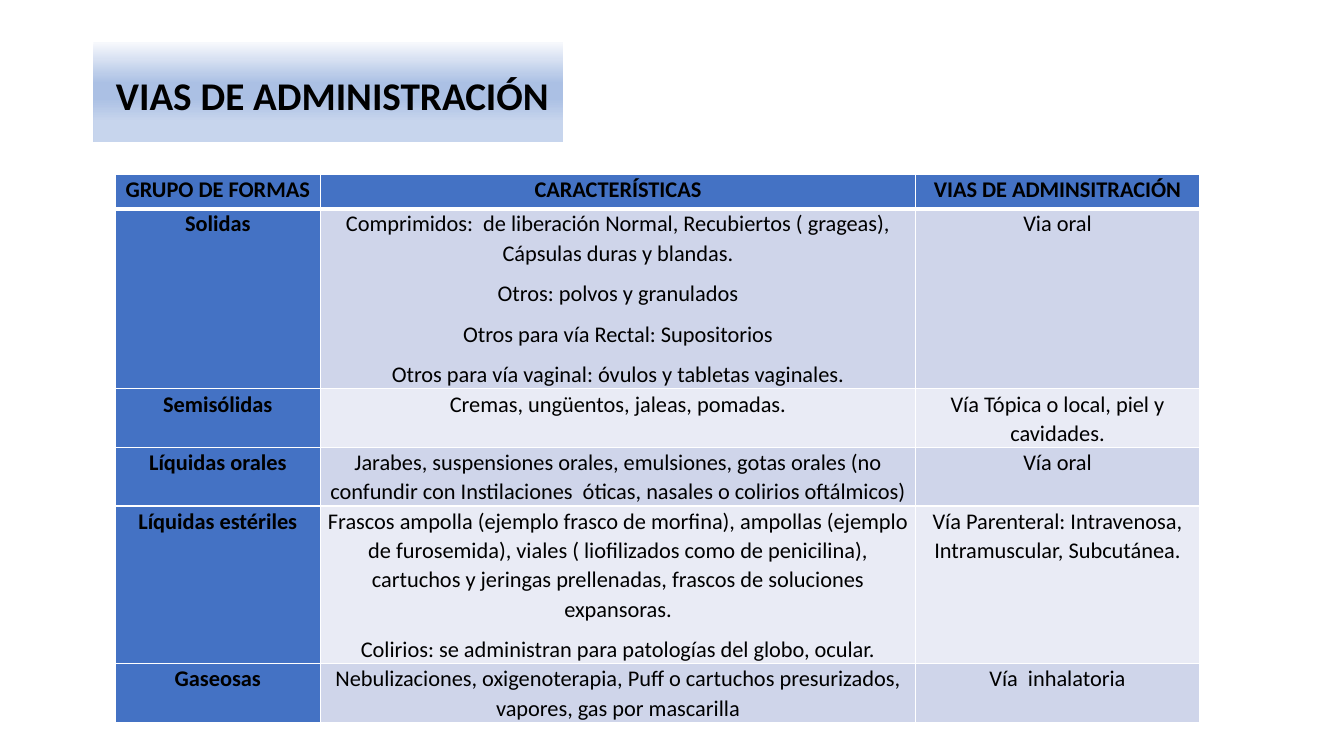
from lxml.etree import SubElement
from pptx import Presentation
from pptx.dml.color import RGBColor
from pptx.enum.text import MSO_ANCHOR, MSO_AUTO_SIZE, PP_ALIGN
from pptx.oxml import parse_xml
from pptx.oxml.ns import nsdecls, qn
from pptx.util import Cm, Pt

BLUE, WHITE, BLACK = "4472C4", "FFFFFF", "000000"
BANDS = ["CFD5EA", "E9EBF5"]
STOPS = [(0, "F6F8FC"), (41, "ABC0E4"), (56, "ABC0E4"), (80, "C7D5ED")]
WIDTHS = [5.16, 15.01, 7.14]
HEIGHTS = [0.86, 3.84, 0.89, 1.32, 3.48, 1.32]
ROWS = [
    ("GRUPO DE FORMAS", "CARACTERÍSTICAS", "VIAS DE ADMINSITRACIÓN"),
    ("Solidas",
     "Comprimidos:  de liberación Normal, Recubiertos ( grageas), Cápsulas duras y blandas.\n"
     "Otros: polvos y granulados\n"
     "Otros para vía Rectal: Supositorios\n"
     "Otros para vía vaginal: óvulos y tabletas vaginales.",
     "Via oral"),
    ("Semisólidas", "Cremas, ungüentos, jaleas, pomadas.",
     "Vía Tópica o local, piel y cavidades."),
    ("Líquidas orales",
     "Jarabes, suspensiones orales, emulsiones, gotas orales (no confundir con "
     "Instilaciones  óticas, nasales o colirios oftálmicos)",
     "Vía oral"),
    ("Líquidas estériles",
     "Frascos ampolla (ejemplo frasco de morfina), ampollas (ejemplo de furosemida), "
     "viales ( liofilizados como de penicilina), cartuchos y jeringas prellenadas, "
     "frascos de soluciones expansoras.\n"
     "Colirios: se administran para patologías del globo, ocular.",
     "Vía Parenteral: Intravenosa, Intramuscular, Subcutánea."),
    ("Gaseosas",
     "Nebulizaciones, oxigenoterapia, Puff o cartuchos presurizados, vapores, "
     "gas por mascarilla",
     "Vía  inhalatoria"),
]


def color(code):
    """Turn a hex string into a colour."""
    return RGBColor.from_string(code)


def apply(item, values):
    """Set each attribute named in a dict of values."""
    for name, value in values.items():
        setattr(item, name, value)


def style(font, size, bold):
    """Format a font in the slide's typeface."""
    apply(font, {"name": "Calibri", "size": Pt(size), "bold": bold})
    font.color.rgb = color(BLACK)


def shade(shape):
    """Fill a shape with the vertical blue gradient."""
    shape.fill.gradient()
    shape.fill.gradient_angle = 270
    stops = shape.fill._fill._gradFill.find(qn("a:gsLst"))
    for old in list(stops):
        stops.remove(old)
    for place, code in STOPS:
        stop = SubElement(stops, qn("a:gs"), pos=str(place * 1000))
        SubElement(stop, qn("a:srgbClr"), val=code)


def edge(cell, side, width):
    """Draw one white border of a cell."""
    cell._tc.get_or_add_tcPr().append(parse_xml(
        f'<a:ln{side} {nsdecls("a")} w="{Pt(width)}"><a:solidFill>'
        f'<a:srgbClr val="{WHITE}"/></a:solidFill></a:ln{side}>'))


def banner(slide, left, top, width, height):
    """Place the title on its gradient band."""
    title = slide.shapes.title
    apply(title, {"left": left, "top": top, "width": width, "height": height})
    shade(title)
    frame = title.text_frame
    apply(frame, {"vertical_anchor": MSO_ANCHOR.MIDDLE, "word_wrap": True,
                  "auto_size": MSO_AUTO_SIZE.NONE})
    para = frame.paragraphs[0]
    apply(para, {"alignment": PP_ALIGN.LEFT, "line_spacing": 0.9})
    for text, size in [(" ", 40), ("VIAS DE ADMINISTRACIÓN", 28)]:
        run = para.add_run()
        run.text = text
        style(run.font, size, True)


def fill_cell(cell, text, row, col):
    """Write, border and colour one cell."""
    head = row == 0 or col == 0
    cell.text = text
    apply(cell, {"margin_left": Cm(0.18), "margin_right": Cm(0.18),
                 "margin_top": 0, "margin_bottom": 0})
    for para in cell.text_frame.paragraphs:
        apply(para, {"alignment": PP_ALIGN.CENTER, "line_spacing": 1.07,
                     "space_after": Pt(8)})
        style(para.runs[0].font, 16, head)
    widths = {"L": 1, "R": 1, "T": 3 if row == 1 else 1, "B": 3 if row == 0 else 1}
    for side, width in widths.items():
        edge(cell, side, width)
    cell.fill.solid()
    cell.fill.fore_color.rgb = color(BLUE if head else BANDS[(row - 1) % 2])


def grid(slide, left, top):
    """Place the table of forms and routes."""
    table = slide.shapes.add_table(len(ROWS), len(WIDTHS), left, top,
                                   Cm(sum(WIDTHS)), Cm(sum(HEIGHTS))).table
    for col, width in zip(table.columns, WIDTHS):
        col.width = Cm(width)
    for line, height in zip(table.rows, HEIGHTS):
        line.height = Cm(height)
    for row, texts in enumerate(ROWS):
        for col, text in enumerate(texts):
            fill_cell(table.cell(row, col), text, row, col)


def main():
    """Build and save the slide."""
    deck = Presentation()
    apply(deck, {"slide_width": Cm(33.87), "slide_height": Cm(19.05)})
    slide = deck.slides.add_slide(deck.slide_layouts[5])
    banner(slide, Cm(2.35), Cm(1.07), Cm(11.84), Cm(2.5))
    grid(slide, Cm(2.91), Cm(4.4))
    deck.save("out.pptx")


if __name__ == "__main__":
    main()
